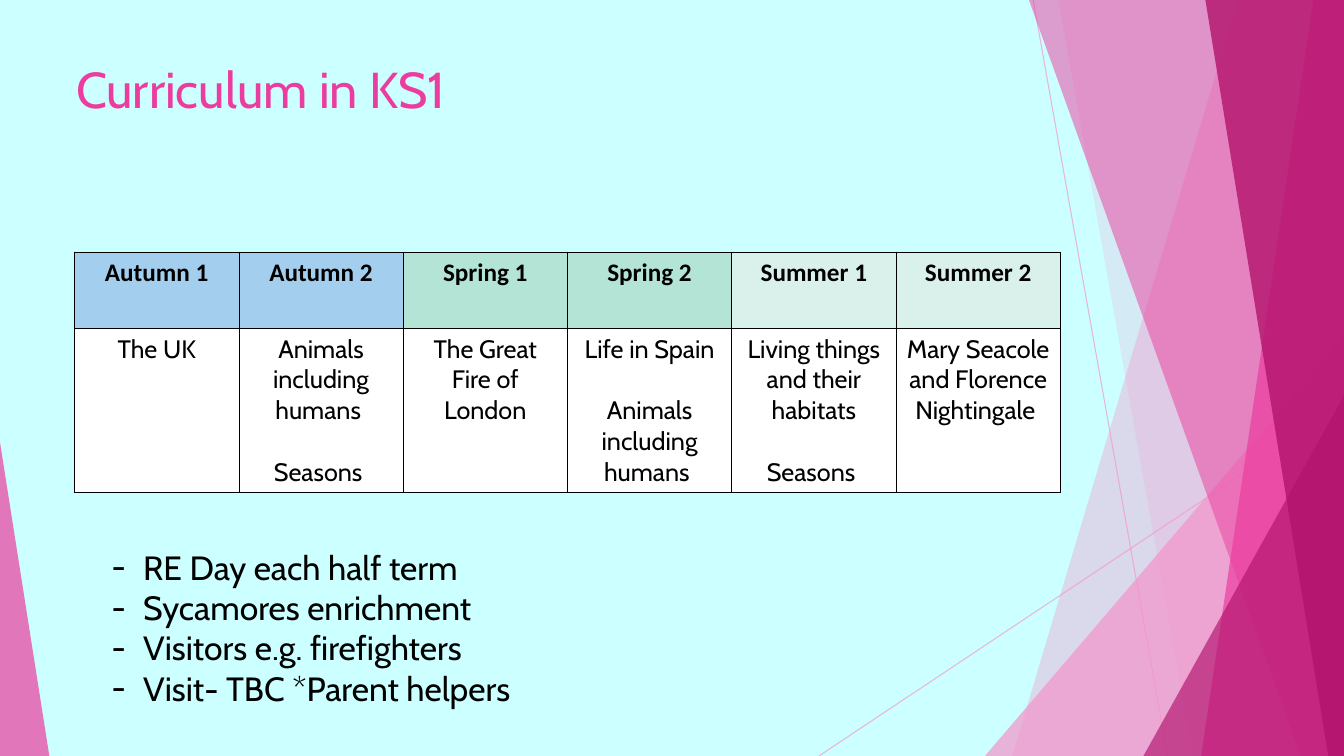
from lxml import etree
from pptx import Presentation
from pptx import util as u
from pptx.dml.color import RGBColor
from pptx.enum import shapes, text
from pptx.oxml import ns

PX = 9525  # EMU in one px, slide of 1280 x 720
WIDE, HIGH = 1280, 720
PALE, PINK, DARK, BLACK = "F496CB", "EB3D9F", "B2136D", "000000"

TERMS = [
    ("Autumn 1", "A3CEED", ["The UK"]),
    ("Autumn 2", "A3CEED", ["Animals including humans ", "Seasons "]),
    ("Spring 1", "B3E4D6", ["The Great Fire of London"]),
    ("Spring 2", "B3E4D6", ["Life in Spain", "Animals including humans "]),
    ("Summer 1", "D9F1EA", ["Living things and their habitats", "Seasons "]),
    ("Summer 2", "D9F1EA", ["Mary Seacole and Florence Nightingale "]),
]
NOTES = ["RE Day each half term", "Sycamores enrichment",
         "Visitors e.g. firefighters", "Visit- TBC *Parent helpers"]


def px(*sizes):
    return [u.Emu(size * PX) for size in sizes]


def rgb(code):
    return RGBColor.from_string(code)


def add(parent, tag, **attrs):
    return etree.SubElement(parent, ns.qn(tag), attrs)


def fade(fill, code, alpha):
    """Make a fill solid, with alpha as a percentage of opacity."""
    fill.solid()
    fill.fore_color.rgb = rgb(code)
    tint = fill._xPr.find(".//" + ns.qn("a:srgbClr"))
    add(tint, "a:alpha", val=str(alpha * 1000))


def paint(shape, code, alpha):
    shape.shadow.inherit = False
    shape.line.fill.background()
    fade(shape.fill, code, alpha)


def band(slide, top, foot, code, alpha):
    """Fill from a slanted edge to the right side of the slide."""
    form = slide.shapes.build_freeform(top, 0, scale=PX)
    form.add_line_segments([(WIDE, 0), (WIDE, HIGH), (foot, HIGH)])
    paint(form.convert_to_shape(), code, alpha)


def wedge(slide, box, peak, code, alpha):
    shape = slide.shapes.add_shape(
        shapes.MSO_SHAPE.ISOSCELES_TRIANGLE, *px(*box))
    shape.adjustments[0] = peak
    paint(shape, code, alpha)


def ray(slide, *ends):
    line = slide.shapes.add_connector(
        shapes.MSO_CONNECTOR.STRAIGHT, *px(*ends))
    line.line.width = u.Pt(0.75)
    fade(line.line.fill, PALE, 70)
    add(line._element.spPr, "a:effectLst")


def write(frame, lines, size=18, font="Cabin", code=BLACK, bold=False,
          align=text.PP_ALIGN.LEFT, gap=0, dash=0):
    """Fill a frame; gap is points between lines, dash a bullet indent."""
    frame.word_wrap = True
    frame.vertical_anchor = text.MSO_ANCHOR.TOP
    for i, words in enumerate(lines):
        para = frame.add_paragraph() if i else frame.paragraphs[0]
        para.alignment = align
        para.space_before = u.Pt(gap if i else 0)
        run = para.add_run()
        run.text = words
        run.font.size = u.Pt(size)
        run.font.name = font
        run.font.bold = bold
        run.font.color.rgb = rgb(code)
        if dash:
            props = para._p.get_or_add_pPr()
            props.set("marL", str(dash * PX))
            props.set("indent", str(-dash * PX))
            add(props, "a:buFont", typeface=font)
            add(props, "a:buChar", char="-")


def edge(cell):
    props = cell._tc.get_or_add_tcPr()
    for i, side in enumerate(("a:lnL", "a:lnR", "a:lnT", "a:lnB")):
        line = etree.Element(ns.qn(side), w=str(u.Pt(0.5)))
        add(add(line, "a:solidFill"), "a:srgbClr", val=BLACK)
        props.insert(i, line)


def fill_cell(cell, lines, back, **style):
    cell.fill.solid()
    cell.fill.fore_color.rgb = rgb(back)
    write(cell.text_frame, lines, align=text.PP_ALIGN.CENTER, **style)
    edge(cell)


def add_terms(slide):
    grid = slide.shapes.add_table(
        2, len(TERMS), *px(71, 240, 939, 229)).table
    for row, high in zip(grid.rows, px(73, 156)):
        row.height = high
    for i, (term, back, topics) in enumerate(TERMS):
        fill_cell(grid.cell(0, i), [term], back, font="Calibri", bold=True)
        fill_cell(grid.cell(1, i), topics, "FFFFFF", gap=22)


def add_decor(slide):
    ray(slide, 984, 0, 1112, HIGH)
    ray(slide, WIDE, 387, 780, HIGH)
    band(slide, 1179, 964, PALE, 36)
    band(slide, 1008, 1136, PALE, 20)
    wedge(slide, (938, 320, 342, 400), 1, PALE, 72)
    band(slide, 980, 1239, PINK, 50)
    band(slide, 1251, 1144, PINK, 70)
    band(slide, 1148, 1265, DARK, 80)
    wedge(slide, (1089, 377, 191, 343), 1, DARK, 66)
    wedge(slide, (0, 421, 47, 299), 0, PINK, 70)


def main():
    deck = Presentation()
    deck.slide_width, deck.slide_height = px(WIDE, HIGH)
    slide = deck.slides.add_slide(deck.slide_layouts[5])
    slide.background.fill.solid()
    slide.background.fill.fore_color.rgb = rgb("CCFFFF")
    add_decor(slide)

    title = slide.shapes.title
    title.left, title.top, title.width, title.height = px(63, 51, 902, 138)
    write(title.text_frame, ["Curriculum in KS1"], size=36, code=PINK)

    add_terms(slide)
    box = slide.shapes.add_textbox(*px(97, 516, 432, 165))
    write(box.text_frame, NOTES, size=24, dash=30)
    deck.save("out.pptx")


if __name__ == "__main__":
    main()
